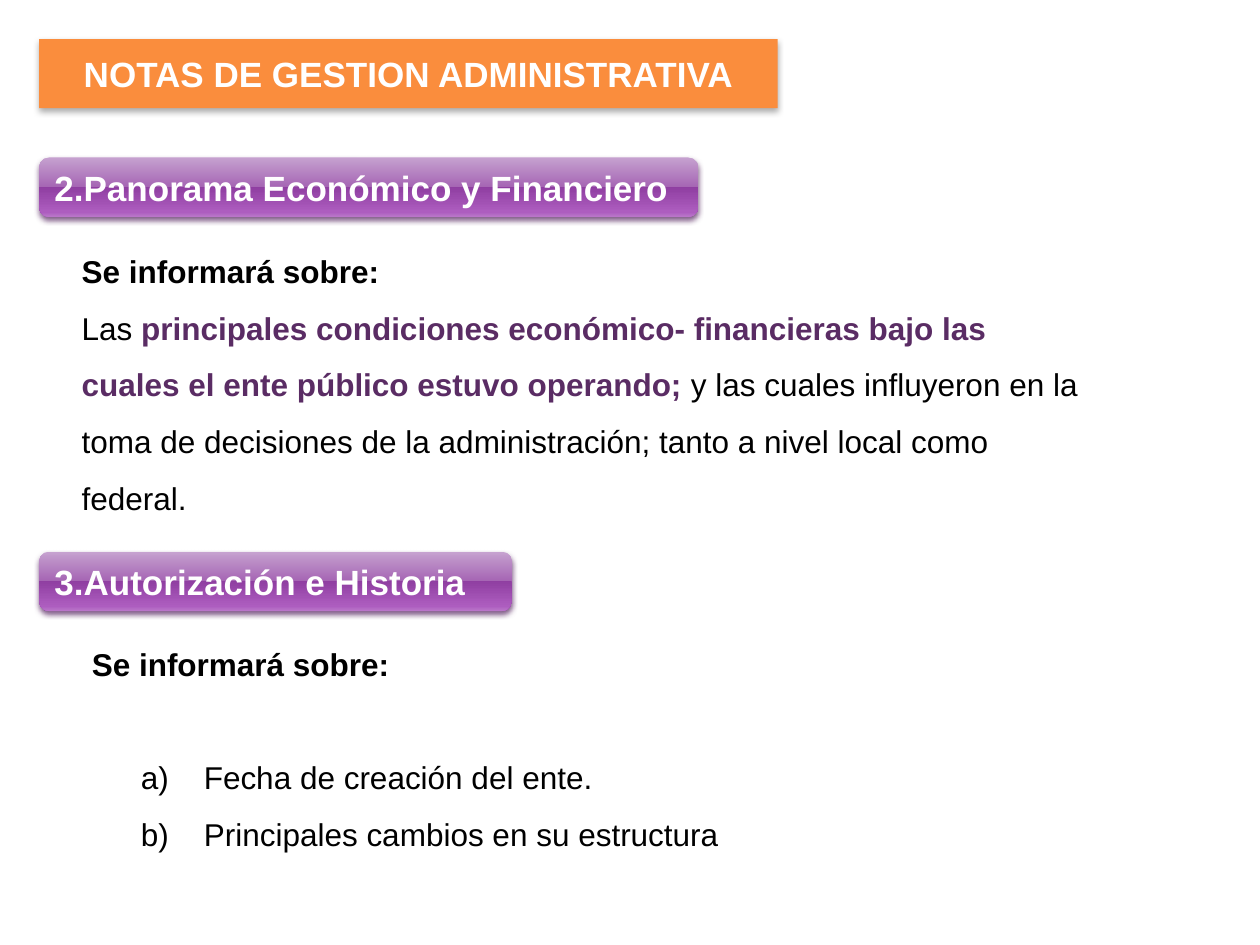
from lxml.etree import SubElement
from pptx import Presentation
from pptx.dml.color import RGBColor
from pptx.enum.shapes import MSO_SHAPE
from pptx.enum.text import MSO_ANCHOR, MSO_AUTO_SIZE, PP_ALIGN
from pptx.oxml.ns import qn
from pptx.util import Pt

FONT = "Arial"
BLACK = "000000"
WHITE = "FFFFFF"
ORANGE = "FA8D3D"
PURPLE = "5A2C64"
LEFT = 22.4
HEADING_STOPS = [(0, "C6A2D0"), (49, "A666B4"), (49, "8F3EA1"),
                 (92, "AD5DBF"), (100, "BA76CA")]


def color(hex_code):
    return RGBColor.from_string(hex_code)


def add_text(paragraph, text, size=18, hex_code=BLACK, bold=False):
    run = paragraph.add_run()
    run.text = text
    run.font.name = FONT
    run.font.size = Pt(size)
    run.font.bold = bold
    run.font.color.rgb = color(hex_code)


def add_color_xml(parent, hex_code):
    return SubElement(parent, qn("a:srgbClr"), val=hex_code)


def set_shadow(shape, hex_code, opacity, blur, distance):
    shape.shadow.inherit = False
    effects = shape._element.spPr.find(qn("a:effectLst"))
    shadow = SubElement(effects, qn("a:outerShdw"), blurRad=str(Pt(blur)),
                        dist=str(Pt(distance)), dir="5400000", rotWithShape="0")
    tint = add_color_xml(shadow, hex_code)
    SubElement(tint, qn("a:alpha"), val=str(opacity * 1000))


def set_gradient(shape, stops):
    shape.fill.gradient()
    shape.fill.gradient_angle = 270
    stop_list = shape._element.spPr.find(".//" + qn("a:gsLst"))
    for old_stop in list(stop_list):
        stop_list.remove(old_stop)
    for position, hex_code in stops:
        stop = SubElement(stop_list, qn("a:gs"), pos=str(position * 1000))
        add_color_xml(stop, hex_code)


def add_banner(slide, kind, top, width, height, text, align):
    banner = slide.shapes.add_shape(kind, Pt(LEFT), Pt(top), Pt(width), Pt(height))
    banner.line.fill.background()
    frame = banner.text_frame
    frame.word_wrap = True
    frame.vertical_anchor = MSO_ANCHOR.MIDDLE
    frame.paragraphs[0].alignment = align
    add_text(frame.paragraphs[0], text, size=20, hex_code=WHITE, bold=True)
    return banner


def add_title(slide, text):
    title = add_banner(slide, MSO_SHAPE.RECTANGLE, 22.4, 422, 39.4, text,
                       PP_ALIGN.CENTER)
    title.fill.solid()
    title.fill.fore_color.rgb = color(ORANGE)
    set_shadow(title, BLACK, 32, 3.5, 2.2)


def add_heading(slide, top, width, text):
    heading = add_banner(slide, MSO_SHAPE.ROUNDED_RECTANGLE, top, width, 34, text,
                         PP_ALIGN.LEFT)
    set_gradient(heading, HEADING_STOPS)
    set_shadow(heading, "6A3F73", 83, 3.1, 2)


def add_body(slide, left, top, width, height):
    box = slide.shapes.add_textbox(Pt(left), Pt(top), Pt(width), Pt(height))
    frame = box.text_frame
    frame.word_wrap = True
    frame.auto_size = MSO_AUTO_SIZE.SHAPE_TO_FIT_TEXT
    add_text(frame.paragraphs[0], "Se informará sobre:", bold=True)
    return frame


def add_panorama(slide):
    frame = add_body(slide, 39.6, 129.6, 589, 203.8)
    frame.paragraphs[0].line_spacing = 1.5
    conditions = frame.add_paragraph()
    conditions.line_spacing = 1.5
    add_text(conditions, "Las")
    add_text(conditions, " principales condiciones económico- financieras bajo las "
             "cuales el ente público estuvo operando;", hex_code=PURPLE, bold=True)
    add_text(conditions, " y las cuales influyeron en la toma de decisiones de la "
             "administración; tanto a nivel local como federal.")


def add_history(slide):
    frame = add_body(slide, 45.4, 365, 657.4, 181.4)
    items = ["a)\tFecha de creación del ente.",
             "b)\tPrincipales cambios en su estructura"]
    for index, text in enumerate(items):
        item = frame.add_paragraph()
        item._p.get_or_add_pPr().set("marL", str(Pt(28)))
        item._p.get_or_add_pPr().set("indent", "0")
        item.line_spacing = 1.5
        if index == 0:
            item.space_before = Pt(32.4)
        add_text(item, text)


def main():
    presentation = Presentation()
    presentation.slide_width = Pt(720)
    presentation.slide_height = Pt(540)
    slide = presentation.slides.add_slide(presentation.slide_layouts[6])
    add_panorama(slide)
    add_title(slide, "NOTAS DE GESTION ADMINISTRATIVA")
    add_heading(slide, 90, 376.6, "2.Panorama Económico y Financiero")
    add_heading(slide, 315.2, 270, "3.Autorización e Historia")
    add_history(slide)
    presentation.save("out.pptx")


if __name__ == "__main__":
    main()
